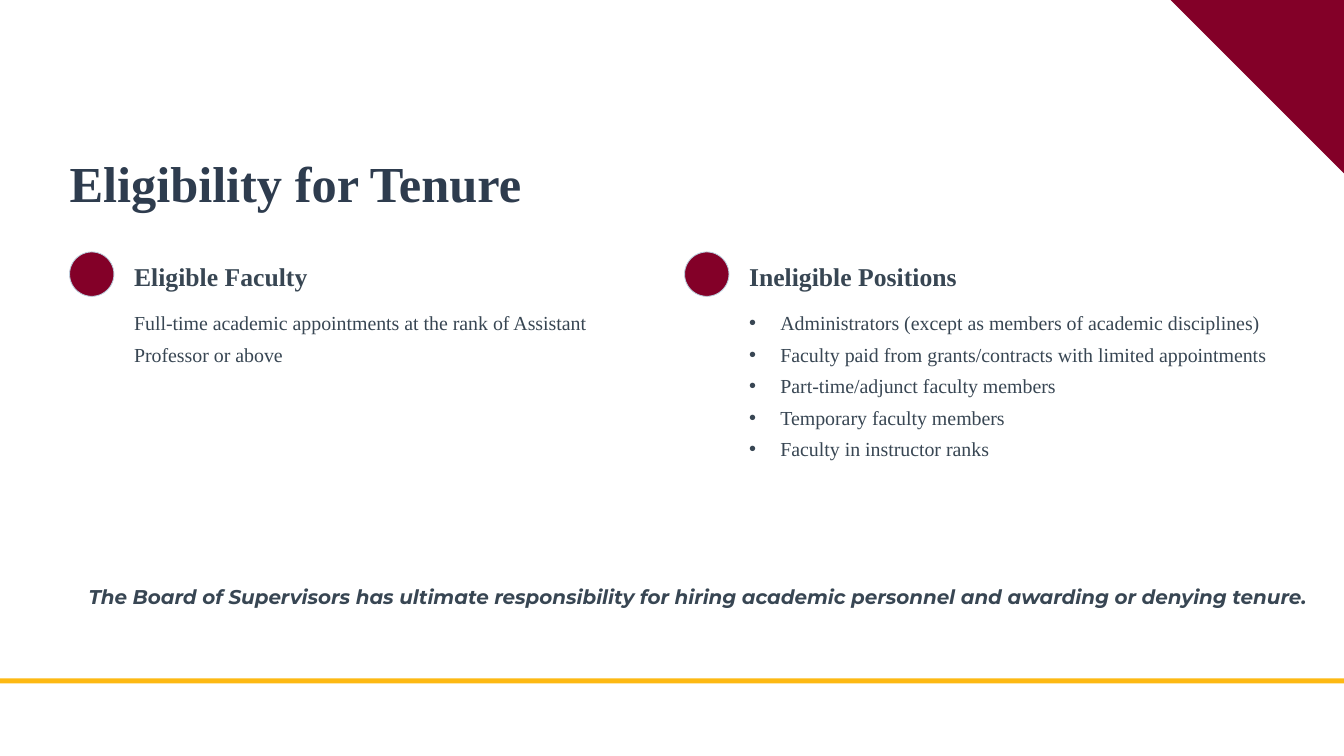
"""Builds the slide on eligibility for tenure."""
from dataclasses import dataclass

from lxml import etree
from pptx import Presentation
from pptx.dml.color import RGBColor
from pptx.enum.shapes import MSO_SHAPE
from pptx.enum.text import MSO_ANCHOR, MSO_AUTO_SIZE, PP_ALIGN
from pptx.oxml.ns import qn
from pptx.util import Inches, Pt

RECT, ROUND, WEDGE = MSO_SHAPE.RECTANGLE, MSO_SHAPE.ROUNDED_RECTANGLE, MSO_SHAPE.RIGHT_TRIANGLE
TOP, LEFT, FIXED = MSO_ANCHOR.TOP, PP_ALIGN.LEFT, MSO_AUTO_SIZE.NONE


@dataclass(frozen=True)
class Theme:
    """Holds the colours, fonts and type sizes."""
    maroon: str = "830028"
    gold: str = "FDB913"
    rim: str = "BACFDD"
    navy: str = "2E3C4E"
    slate: str = "384653"
    serif: str = "Times New Roman"
    sans: str = "Montserrat"
    title: tuple = (36, 46.7)
    head: tuple = (18.3, 23.3)
    body: tuple = (14.2, 22.5)


class Deck:
    """Draws styled elements on the current slide."""

    def __init__(self, theme):
        self.theme = theme
        self.prs = Presentation()
        self.prs.slide_width, self.prs.slide_height = Inches(13.33), Inches(7.5)
        self.slide = self.prs.slides.add_slide(self.prs.slide_layouts[5])

    def shape(self, kind, box, fill, rim=None, turn=0):
        item = self.slide.shapes.add_shape(kind, *map(Inches, box))
        item.shadow.inherit = False
        item.rotation = turn
        item.fill.solid()
        item.fill.fore_color.rgb = RGBColor.from_string(fill)
        if rim:
            item.line.color.rgb = RGBColor.from_string(rim)
            item.line.width = Pt(0.6)
        else:
            item.line.fill.background()
        return item

    def label(self, item, lines, size, wrap=False, dots=False, color=None, **font):
        frame = item.text_frame
        form = {"word_wrap": wrap, "auto_size": FIXED, "vertical_anchor": TOP,
                "margin_left": 0, "margin_top": 0, "margin_right": 0, "margin_bottom": 0}
        for key, value in form.items():
            setattr(frame, key, value)
        frame.text = "\n".join(lines)
        points, pitch = size
        style = {"name": self.theme.serif, "size": Pt(points), **font}
        for para in frame.paragraphs:
            para.alignment, para.line_spacing = LEFT, Pt(pitch)
            if dots:
                self.bullet(para)
            for run in para.runs:
                for key, value in style.items():
                    setattr(run.font, key, value)
                run.font.color.rgb = RGBColor.from_string(color or self.theme.slate)

    def bullet(self, para):
        props = para._p.get_or_add_pPr()
        props.set("marL", str(Inches(0.31)))
        props.set("indent", str(-Inches(0.31)))
        etree.SubElement(props, qn("a:buFont"), typeface="Arial")
        etree.SubElement(props, qn("a:buChar"), char="•")

    def text(self, box, lines, size, **style):
        item = self.slide.shapes.add_textbox(*map(Inches, box))
        self.label(item, lines, size, **style)

    def title(self, box, words):
        item = self.slide.shapes.title
        item.left, item.top, item.width, item.height = map(Inches, box)
        self.label(item, [words], self.theme.title, color=self.theme.navy, bold=True)

    def column(self, left, head, lines, tall, dots=False):
        theme = self.theme
        dot = self.shape(ROUND, (left, 2.5, 0.44, 0.44), theme.maroon, theme.rim)
        dot.adjustments[0] = 0.67
        inner = left + 0.64
        self.text((inner, 2.57, 2.6, 0.32), [head], theme.head, bold=True)
        self.text((inner, 3.01, 5.21, tall), lines, theme.body, wrap=True, dots=dots)


def main():
    theme = Theme()
    deck = Deck(theme)
    deck.shape(WEDGE, (11.61, 0, 1.72, 1.72), theme.maroon, turn=180)
    deck.shape(RECT, (0, 6.73, 13.33, 0.05), theme.gold)
    deck.title((0.69, 1.46, 5.2, 0.65), "Eligibility for Tenure")
    deck.column(0.69, "Eligible Faculty", [
        "Full-time academic appointments at the rank of Assistant Professor or above"], 0.63)
    deck.column(6.79, "Ineligible Positions", [
        "Administrators (except as members of academic disciplines)",
        "Faculty paid from grants/contracts with limited appointments",
        "Part-time/adjunct faculty members",
        "Temporary faculty members",
        "Faculty in instructor ranks"], 2.34, dots=True)
    deck.text((0.88, 5.72, 11.76, 0.32), [
        "The Board of Supervisors has ultimate responsibility for hiring "
        "academic personnel and awarding or denying tenure."],
        theme.body, name=theme.sans, bold=True, italic=True)
    deck.prs.save("out.pptx")


if __name__ == "__main__":
    main()
